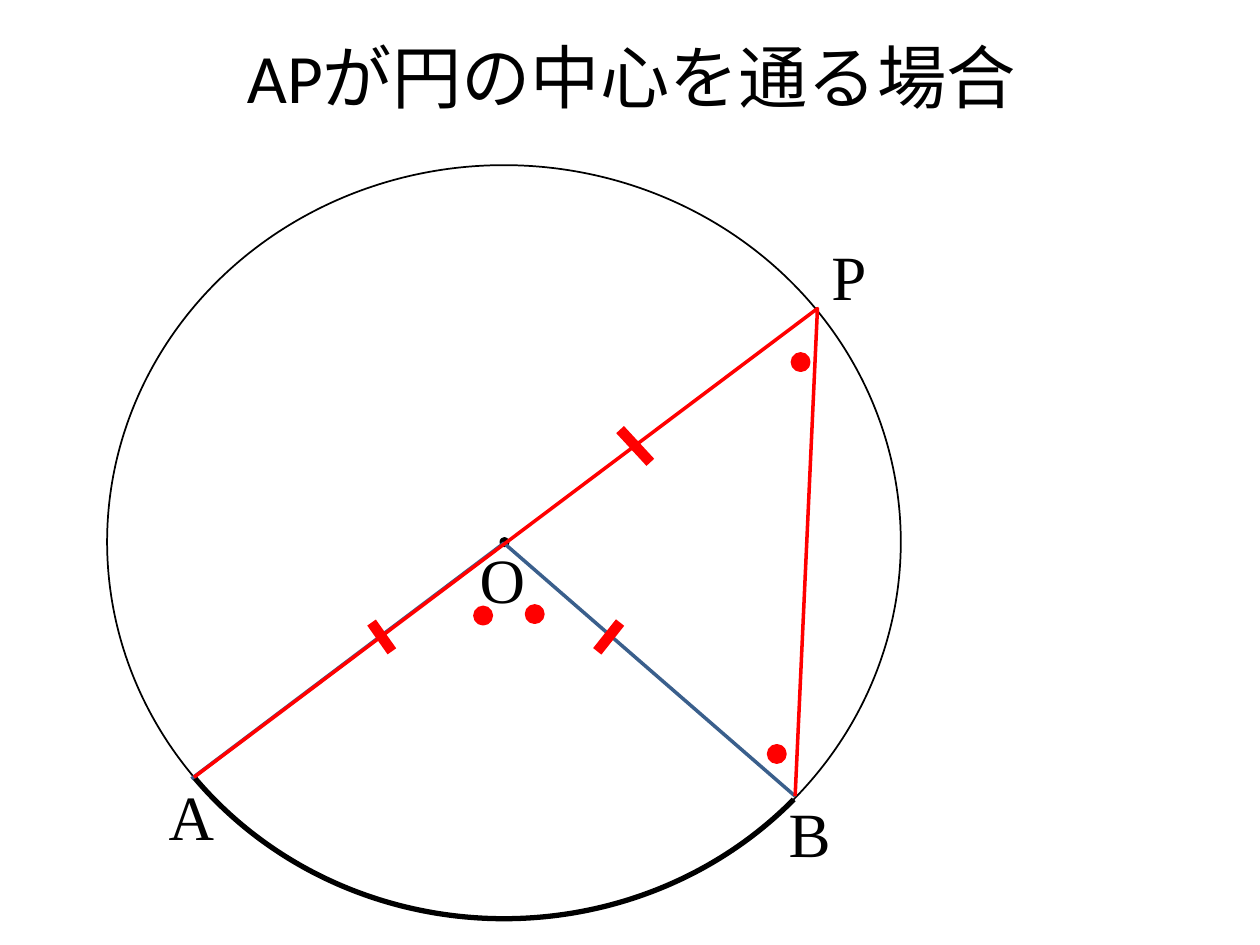
from lxml import etree
from pptx import Presentation
from pptx.dml.color import RGBColor
from pptx.enum.shapes import MSO_CONNECTOR, MSO_SHAPE
from pptx.enum.text import MSO_ANCHOR, PP_ALIGN
from pptx.oxml.ns import qn
from pptx.util import Cm, Pt

OVAL, ARC = MSO_SHAPE.OVAL, MSO_SHAPE.ARC
STRAIGHT = MSO_CONNECTOR.STRAIGHT
MIDDLE, TOP = MSO_ANCHOR.MIDDLE, MSO_ANCHOR.TOP
LEFT, CENTER = PP_ALIGN.LEFT, PP_ALIGN.CENTER

COLORS = {"black": "000000", "blue": "3A5F8C", "red": "FF0000"}

# All lengths are in centimetres.
TITLE = ("APが円の中心を通る場合", (1.3, 0.53, 22.86, 2.01))
CIRCLE = (2.16, 3.33, 16, 15.19)
ARC_ANGLES = (132.98, 193.62)
CENTRE_DOT = ((10.17, 10.93), 0.13)
POINT_O, POINT_B, POINT_P = (10.16, 10.95), (16.03, 16.05), (16.48, 6.22)
PATHS = [
    ([(3.86, 15.7), POINT_O, POINT_B], "blue"),
    ([(3.91, 15.67), POINT_P, POINT_B], "red"),
]
LABELS = [
    ("O", (9.42, 10.77, 1.37, 1.8)),
    ("B", (15.65, 15.9, 1.3, 1.8)),
    ("A", (3.15, 15.54, 1.32, 1.8)),
    ("P", (16.51, 4.67, 1.24, 1.8)),
]
EQUAL_LENGTH_TICKS = [
    ((7.49, 12.55), (7.9, 13.13)),
    ((12.5, 12.55), (12.04, 13.13)),
    ((12.5, 8.66), (13.11, 9.32)),
]
ANGLE_DOTS = [(16.14, 7.3), (15.66, 15.2), (9.74, 12.41), (10.78, 12.38)]
ANGLE_DOT_SIZE = 0.33


def to_cm(values):
    return [Cm(value) for value in values]


def style(shape, color, width, filled=False):
    shape.shadow.inherit = False
    shape.line.color.rgb = RGBColor.from_string(COLORS[color])
    shape.line.width = Pt(width)
    if filled:
        shape.fill.solid()
        shape.fill.fore_color.rgb = RGBColor.from_string(COLORS[color])
    else:
        shape.fill.background()


def add_outline(slide, kind, width):
    shape = slide.shapes.add_shape(kind, *to_cm(CIRCLE))
    style(shape, "black", width)
    return shape


def add_dot(slide, centre, size, color):
    corner = [value - size / 2 for value in centre]
    dot = slide.shapes.add_shape(OVAL, *to_cm([*corner, size, size]))
    style(dot, color, 2, filled=True)


def add_path(slide, points, color):
    start, *others = [to_cm(point) for point in points]
    builder = slide.shapes.build_freeform(*start)
    builder.add_line_segments(others, close=False)
    style(builder.convert_to_shape(), color, 2)


def add_text(slide, text, place, font, size, align=LEFT, anchor=TOP, wrap=False):
    box = slide.shapes.add_textbox(*to_cm(place))
    frame = box.text_frame
    frame.word_wrap = wrap
    frame.vertical_anchor = anchor
    para = frame.paragraphs[0]
    para.text = text
    para.alignment = align
    para.font.name = font
    para.font.size = Pt(size)
    para.font.color.rgb = RGBColor.from_string(COLORS["black"])


def add_tick(slide, start, end):
    tick = slide.shapes.add_connector(STRAIGHT, *to_cm([*start, *end]))
    tick.line.color.rgb = RGBColor.from_string(COLORS["red"])
    tick.line.width = Pt(6)
    etree.SubElement(tick._element.spPr, qn("a:effectLst"))


def main():
    deck = Presentation()
    deck.slide_width, deck.slide_height = Cm(25.4), Cm(19.05)
    slide = deck.slides.add_slide(deck.slide_layouts[6])

    add_text(slide, *TITLE, "Calibri", 39.6, CENTER, MIDDLE, wrap=True)
    add_outline(slide, OVAL, 1)
    arc = add_outline(slide, ARC, 3)
    arc.rotation = 180
    for index, angle in enumerate(ARC_ANGLES):
        arc.adjustments[index] = angle
    add_dot(slide, *CENTRE_DOT, "black")

    for points, color in PATHS:
        add_path(slide, points, color)
    for letter, place in LABELS:
        add_text(slide, letter, place, "Times New Roman", 36)
    for start, end in EQUAL_LENGTH_TICKS:
        add_tick(slide, start, end)
    for centre in ANGLE_DOTS:
        add_dot(slide, centre, ANGLE_DOT_SIZE, "red")

    deck.save("out.pptx")


if __name__ == "__main__":
    main()
